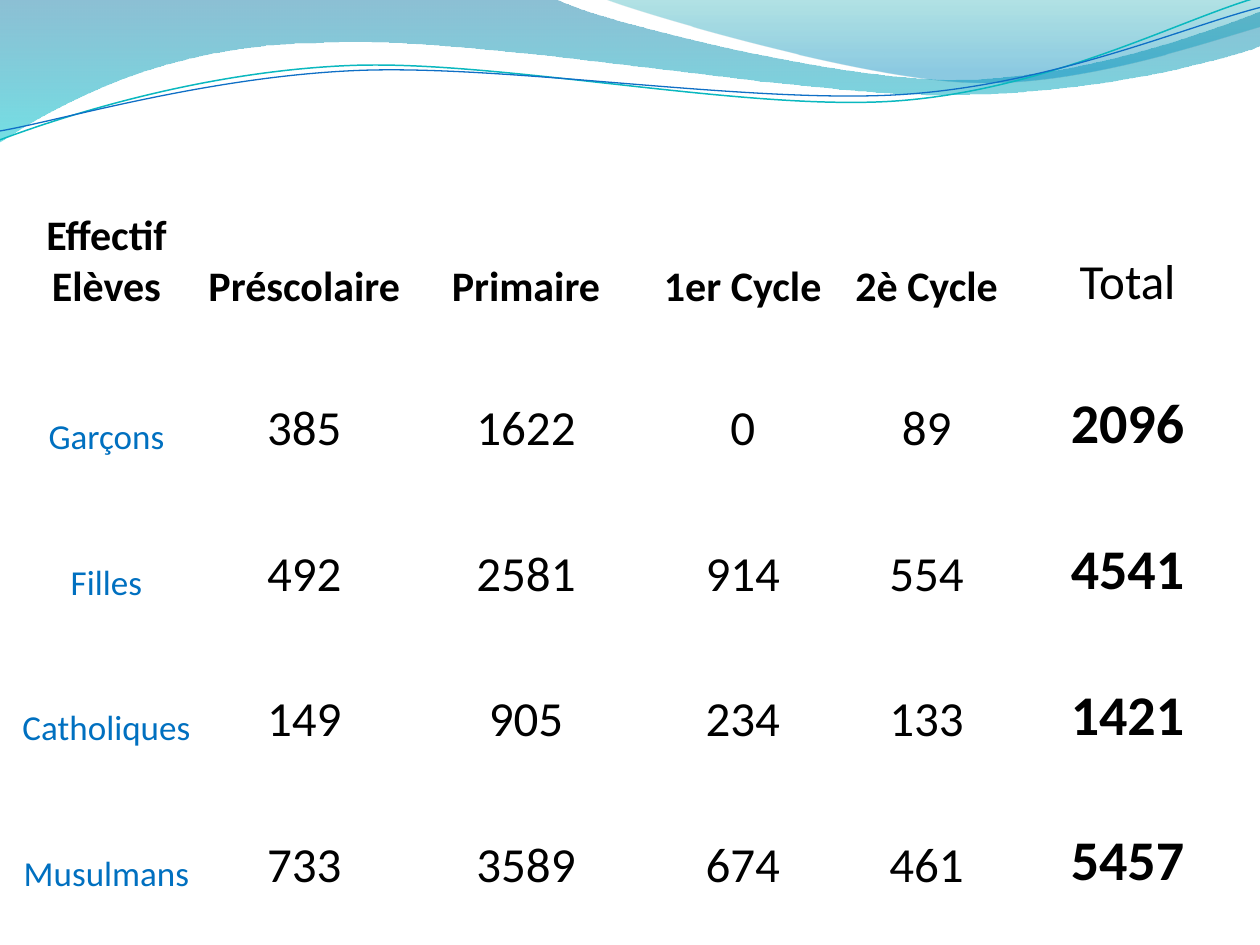
from dataclasses import dataclass
from math import cos, radians, sin
from typing import NamedTuple, Optional

from lxml.etree import SubElement
from pptx import Presentation
from pptx.dml.color import RGBColor as Rgb
from pptx.enum.text import MSO_ANCHOR as Anchor, PP_ALIGN as Align
from pptx.oxml.ns import qn
from pptx.util import Inches, Pt


@dataclass(frozen=True)
class Theme:
    font: str = "Calibri"
    ink: str = "000000"
    label: str = "0070C0"
    paper: str = "FFFFFF"
    label_size: int = 20
    header_size: int = 24
    figure_size: int = 28
    total_size: int = 32


class Stop(NamedTuple):
    position: float
    color: str
    opacity: int  # percent


class Stroke(NamedTuple):
    color: str
    width: float


class TextStyle(NamedTuple):
    size: int
    color: str
    bold: bool = False


@dataclass(frozen=True)
class Wave:
    """A path of grid points: two numbers draw a line, six draw a Bézier curve."""
    start: tuple
    steps: tuple
    gradient: Optional[tuple] = None
    stroke: Optional[Stroke] = None
    center: tuple = (0, 0)
    tilt: float = 0  # degrees anticlockwise about the center


THEME = Theme()
GRID_COLUMNS, GRID_ROWS = 10, 7.5  # one grid unit is one inch
LINE_TILT = 2.7

WAVES = (
    # Broad band
    Wave((0, -0.01), (
        (4.4, -0.01),
        (4.76, 0.17, 6.64, 0.63, 7.58, 0.63),
        (8.53, 0.63, 9.58, 0.26, 10, 0.09),
        (10.01, 0.36),
        (9.83, 0.44, 8.7, 0.76, 7.46, 0.75),
        (6.22, 0.75, 3.82, 0.28, 2.57, 0.34),
        (1.29, 0.35, 0.46, 0.83, -0.01, 1.13),
        (0, -0.01),
    ), gradient=(Stop(0, "0074A1", 45), Stop(1, "00C6CF", 55))),
    # Light band at the right
    Wave((4.79, -0.01), (
        (5.09, 0.11, 6.82, 0.62, 7.69, 0.65),
        (8.56, 0.69, 9.61, 0.32, 10, 0.21),
        (10, 0),
        (4.79, -0.01),
    ), gradient=(Stop(0, "00A1A9", 30), Stop(0.8, "008BBF", 45))),
    # Thin lines
    Wave((0, 1.11), (
        (0.48, 0.93, 1.58, 0.57, 2.77, 0.52),
        (3.95, 0.47, 5.93, 0.89, 7.13, 0.8),
        (8.33, 0.71, 9.38, 0.15, 9.98, -0.02),
    ), stroke=Stroke("0AB8BF", 0.85), center=(4.99, 0.57), tilt=LINE_TILT),
    Wave((0, 1.04), (
        (0.47, 0.96, 1.64, 0.61, 2.83, 0.56),
        (4.03, 0.51, 5.97, 0.83, 7.17, 0.75),
        (8.36, 0.67, 9.41, 0.21, 10, 0.06),
    ), stroke=Stroke("0F6FC6", 0.75), center=(5, 0.59), tilt=LINE_TILT),
)

TABLE_LEFT, TABLE_TOP, TABLE_HEIGHT = 0.08, 1.33, 5.78
COLUMN_WIDTHS = (1.53, 1.61, 1.91, 1.53, 1.39, 1.8)
ENROLMENT = (
    ("Effectif Elèves", "Préscolaire", "Primaire", "1er Cycle", "2è Cycle", "Total"),
    ("Garçons", "385", "1622", "0", "89", "2096"),
    ("Filles", "492", "2581", "914", "554", "4541"),
    ("Catholiques", "149", "905", "234", "133", "1421"),
    ("Musulmans", "733", "3589", "674", "461", "5457"),
)


def level_point(wave: Wave, x: float, y: float) -> tuple:
    """Place of a point before the wave is tilted, in EMU."""
    angle = radians(wave.tilt)
    dx, dy = x - wave.center[0], y - wave.center[1]
    return (Inches(wave.center[0] + dx * cos(angle) - dy * sin(angle)),
            Inches(wave.center[1] + dx * sin(angle) + dy * cos(angle)))


def bend_curves(ribbon, steps: tuple) -> None:
    """Join the three points of each six-number step into one Bézier curve."""
    segments = iter(list(ribbon.element.iter(qn("a:lnTo"))))
    for step in steps:
        segment = next(segments)
        if len(step) == 6:
            segment.tag = qn("a:cubicBezTo")
            for extra in (next(segments), next(segments)):
                segment.append(extra[0])
                extra.getparent().remove(extra)


def draw_wave(slide, wave: Wave) -> None:
    points = [level_point(wave, *step[i:i + 2])
              for step in wave.steps for i in range(0, len(step), 2)]
    builder = slide.shapes.build_freeform(*level_point(wave, *wave.start))
    builder.add_line_segments(points, close=wave.gradient is not None)
    ribbon = builder.convert_to_shape()
    bend_curves(ribbon, wave.steps)
    ribbon.rotation = -wave.tilt % 360
    ribbon.shadow.inherit = False

    if wave.stroke:
        ribbon.line.color.rgb = Rgb.from_string(wave.stroke.color)
        ribbon.line.width = Pt(wave.stroke.width)
    else:
        ribbon.line.fill.background()

    if wave.gradient:
        ribbon.fill.gradient()
        ribbon.fill.gradient_angle = 270  # top to bottom
        for target, stop in zip(ribbon.fill.gradient_stops, wave.gradient):
            target.position = stop.position
            target.color.rgb = Rgb.from_string(stop.color)
        tints = ribbon.element.spPr.find(qn("a:gradFill")).iter(qn("a:srgbClr"))
        for tint, stop in zip(tints, wave.gradient):
            SubElement(tint, qn("a:alpha")).set("val", str(stop.opacity * 1000))
    else:
        ribbon.fill.background()


def style_for(row: int, column: int) -> TextStyle:
    is_total = column == len(COLUMN_WIDTHS) - 1
    if row == 0:
        return (TextStyle(THEME.figure_size, THEME.ink) if is_total
                else TextStyle(THEME.header_size, THEME.ink, True))
    if column == 0:
        return TextStyle(THEME.label_size, THEME.label)
    if is_total:
        return TextStyle(THEME.total_size, THEME.ink, True)
    return TextStyle(THEME.figure_size, THEME.ink)


def fill_cell(cell, text: str, style: TextStyle) -> None:
    cell.fill.background()
    cell.vertical_anchor = Anchor.BOTTOM
    cell.margin_left = cell.margin_right = cell.margin_top = cell.margin_bottom = 0
    paragraph = cell.text_frame.paragraphs[0]
    paragraph.alignment = Align.CENTER
    run = paragraph.add_run()
    run.text = text
    run.font.name = THEME.font
    run.font.size = Pt(style.size)
    run.font.bold = style.bold
    run.font.color.rgb = Rgb.from_string(style.color)


def draw_enrolment(slide) -> None:
    enrolment = slide.shapes.add_table(
        len(ENROLMENT), len(COLUMN_WIDTHS), Inches(TABLE_LEFT), Inches(TABLE_TOP),
        Inches(sum(COLUMN_WIDTHS)), Inches(TABLE_HEIGHT)).table
    enrolment.first_row = enrolment.horz_banding = False
    for column, width in zip(enrolment.columns, COLUMN_WIDTHS):
        column.width = Inches(width)
    for r, texts in enumerate(ENROLMENT):
        for c, text in enumerate(texts):
            fill_cell(enrolment.cell(r, c), text, style_for(r, c))


def main() -> None:
    deck = Presentation()
    deck.slide_width, deck.slide_height = Inches(GRID_COLUMNS), Inches(GRID_ROWS)
    slide = deck.slides.add_slide(deck.slide_layouts[6])
    slide.background.fill.solid()
    slide.background.fill.fore_color.rgb = Rgb.from_string(THEME.paper)

    # Waves across the top
    for wave in WAVES:
        draw_wave(slide, wave)

    # Pupils by group and level
    draw_enrolment(slide)
    deck.save("out.pptx")


if __name__ == "__main__":
    main()
